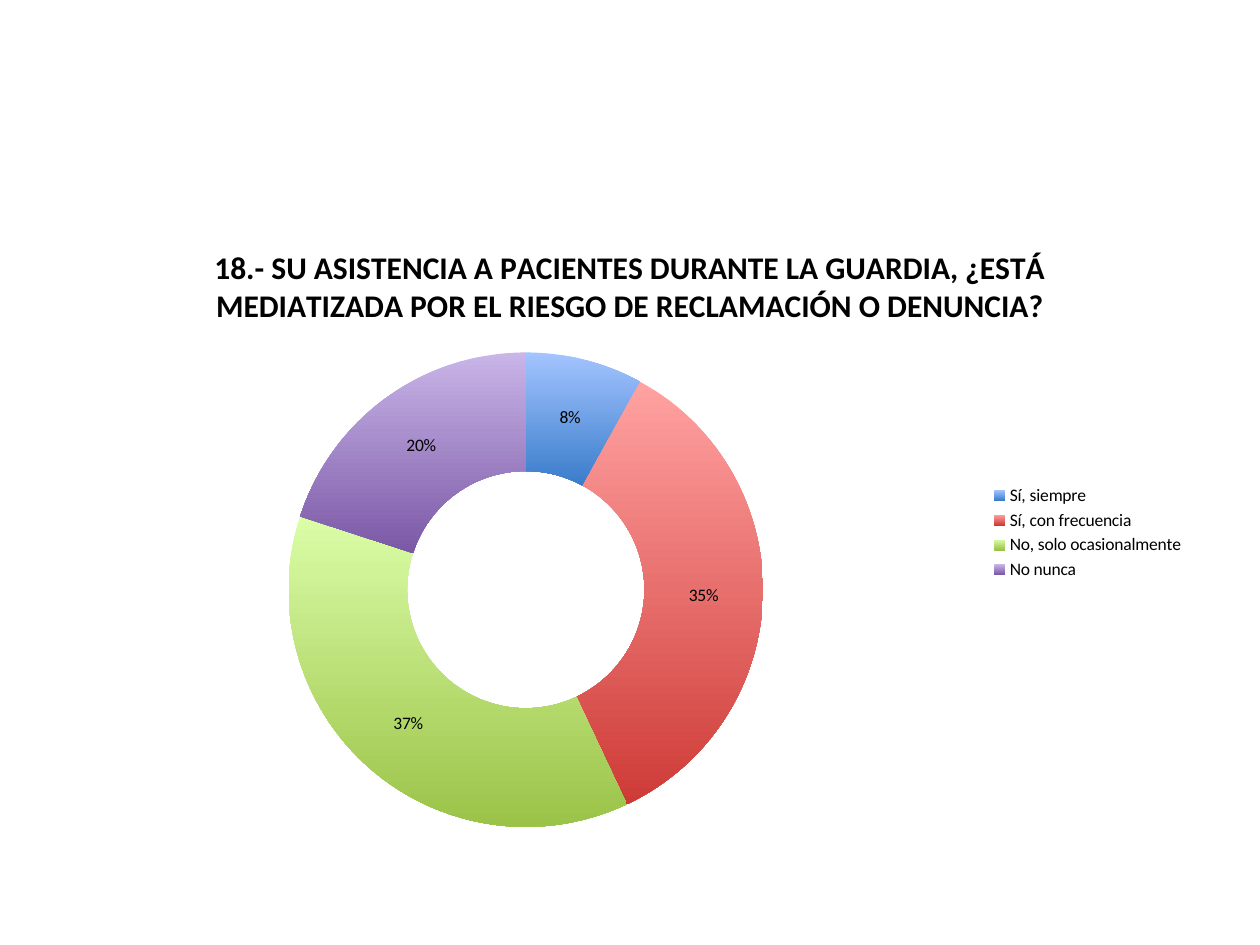
from dataclasses import dataclass

from pptx import Presentation
from pptx.chart.chart import Chart
from pptx.chart.data import CategoryChartData
from pptx.chart.point import Point
from pptx.dml.color import RGBColor
from pptx.enum.chart import XL_CHART_TYPE as ChartType, XL_LEGEND_POSITION as LegendPosition
from pptx.util import Cm, Pt

COLORS = {
    "text": "000000",
    "blue_top": "A3C4FF", "blue_bottom": "3A7CCB",
    "red_top": "FFA2A1", "red_bottom": "CE3B37",
    "green_top": "DAFDA7", "green_bottom": "9BC348",
    "purple_top": "C9B5E8", "purple_bottom": "7B58A6",
}
FONT = "Calibri"
QUESTION = (
    "18.- SU ASISTENCIA A PACIENTES DURANTE LA GUARDIA, "
    "¿ESTÁ MEDIATIZADA POR EL RIESGO DE RECLAMACIÓN O DENUNCIA?"
)


@dataclass
class Answer:
    label: str
    percent: int
    hue: str


ANSWERS = [
    Answer("Sí, siempre", 8, "blue"),
    Answer("Sí, con frecuencia", 35, "red"),
    Answer("No, solo ocasionalmente", 37, "green"),
    Answer("No nunca", 20, "purple"),
]


def color(name: str) -> RGBColor:
    return RGBColor.from_string(COLORS[name])


def fill_segment(point: Point, hue: str) -> None:
    fill = point.format.fill
    fill.gradient()
    fill.gradient_angle = 270
    for stop, end in zip(fill.gradient_stops, ("top", "bottom")):
        stop.color.rgb = color(f"{hue}_{end}")
    point.format.line.fill.background()


def format_title(chart: Chart) -> None:
    chart.has_title = True
    chart.chart_title.include_in_layout = False
    paragraph = chart.chart_title.text_frame.paragraphs[0]
    paragraph.text = QUESTION
    paragraph.font.name = FONT
    paragraph.font.size = Pt(18)
    paragraph.font.bold = True
    paragraph.font.color.rgb = color("text")


def format_chart(chart: Chart) -> None:
    chart.font.name = FONT
    chart.font.size = Pt(10)
    chart.font.color.rgb = color("text")
    format_title(chart)
    chart.has_legend = True
    chart.legend.position = LegendPosition.RIGHT
    chart.legend.include_in_layout = False

    plot = chart.plots[0]
    plot.vary_by_categories = True
    plot.has_data_labels = True
    labels = plot.data_labels
    labels.show_percentage = True
    labels.show_value = False
    labels.number_format = "0%"
    labels.number_format_is_linked = False
    for index, answer in enumerate(ANSWERS):
        fill_segment(plot.series[0].points[index], answer.hue)


def main() -> None:
    presentation = Presentation()
    presentation.slide_width = Cm(25.4)
    presentation.slide_height = Cm(19.05)
    slide = presentation.slides.add_slide(presentation.slide_layouts[6])
    data = CategoryChartData()
    data.categories = [answer.label for answer in ANSWERS]
    data.add_series(QUESTION, [answer.percent for answer in ANSWERS])
    frame = slide.shapes.add_chart(
        ChartType.DOUGHNUT, Cm(1.27), Cm(4.45), Cm(22.86), Cm(12.57), data
    )
    format_chart(frame.chart)
    presentation.save("out.pptx")


if __name__ == "__main__":
    main()
